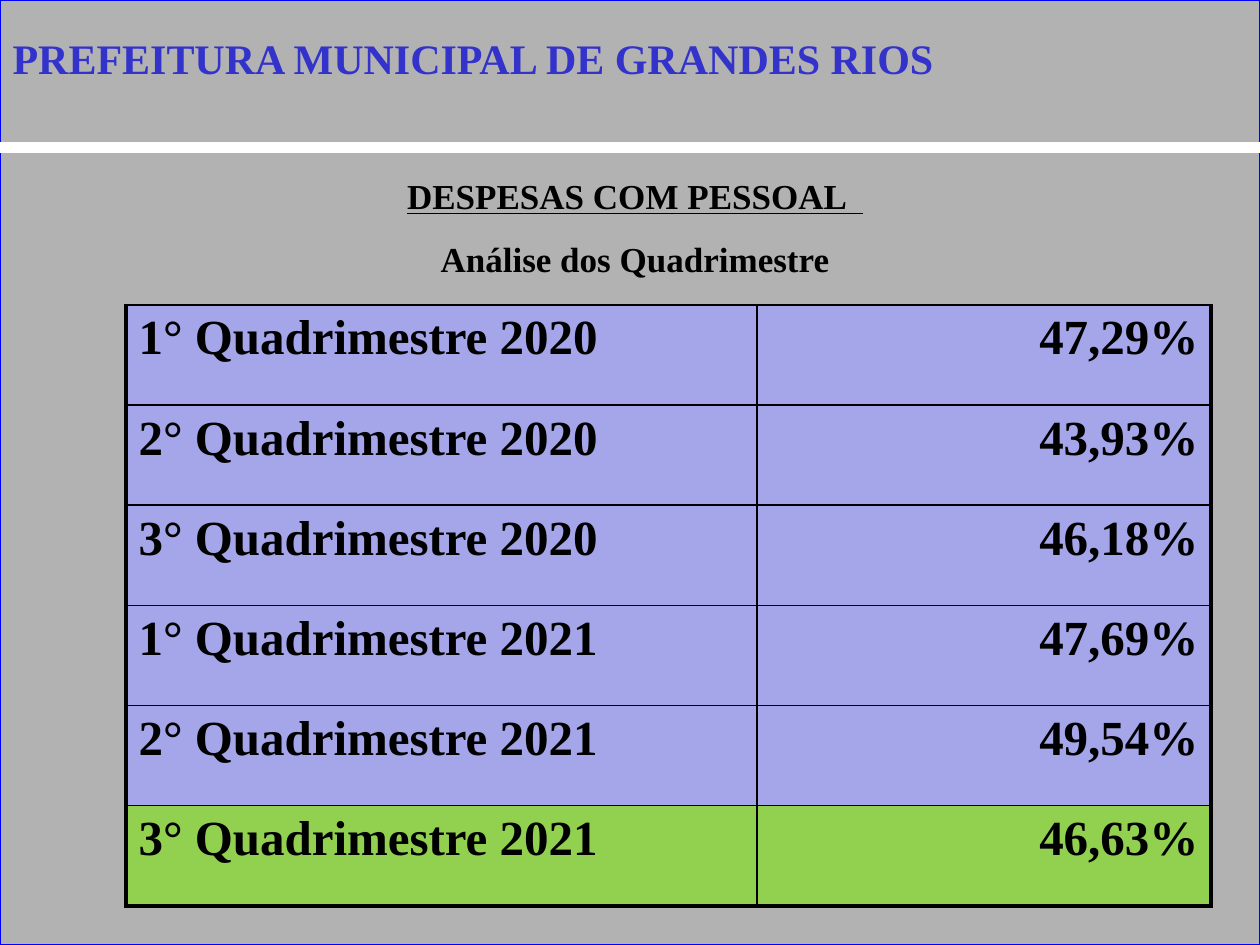
import pptx
import pptx.util
import pptx.dml.color
import pptx.enum.shapes
import pptx.enum.text
import pptx.oxml
import pptx.oxml.ns

Pt = pptx.util.Pt
Align = pptx.enum.text.PP_ALIGN
NS = pptx.oxml.ns.nsdecls("a")
HUES = {"back": "B2B2B2", "edge": "0000FF", "rule": "FFFFFF", "ink": "000000",
        "head": "3333CC", "shade": "808080", "row": "A5A5E9", "last": "92D050"}
FONT = "Times New Roman"


class Deck:
    """Style and current slide; lengths are units of a 10 by 7.5 grid."""

    def __init__(self, cols=10, rows=7.5):
        self.prs = pptx.Presentation()
        self.prs.slide_width = pptx.util.Inches(cols)
        self.prs.slide_height = pptx.util.Inches(rows)
        self.unit = self.prs.slide_width / cols
        self.slide = self.prs.slides.add_slide(self.prs.slide_layouts[5])
        self.shapes = self.slide.shapes

    def grid(self, *spans):
        return [round(span * self.unit) for span in spans]

    def hue(self, name):
        return pptx.dml.color.RGBColor.from_string(HUES[name])

    def paint(self, fill, name):
        fill.solid()
        fill.fore_color.rgb = self.hue(name)

    def stroke(self, line, name, width):
        line.color.rgb = self.hue(name)
        line.width = Pt(width)

    def add_run(self, para, text, size, hue="ink", under=False):
        run = para.add_run()
        run.text = text
        font = run.font
        font.name, font.size, font.bold = FONT, Pt(size), True
        font.underline = under
        self.paint(font.fill, hue)
        return run

    def frame(self, shape):
        body = shape.text_frame
        body.word_wrap = True
        body.auto_size = pptx.enum.text.MSO_AUTO_SIZE.SHAPE_TO_FIT_TEXT
        body.vertical_anchor = pptx.enum.text.MSO_ANCHOR.TOP
        return body

    def panel(self, box, fill, edge):
        kind = pptx.enum.shapes.MSO_SHAPE.RECTANGLE
        shape = self.shapes.add_shape(kind, *self.grid(*box))
        shape.shadow.inherit = False
        self.paint(shape.fill, fill)
        self.stroke(shape.line, edge, 0.75)

    def rule(self, ends, hue, width):
        kind = pptx.enum.shapes.MSO_CONNECTOR.STRAIGHT
        line = self.shapes.add_connector(kind, *self.grid(*ends))
        self.stroke(line.line, hue, width)
        line.element.spPr.append(pptx.oxml.parse_xml(f"<a:effectLst {NS}/>"))

    def title(self, box, text):
        shape = self.shapes.title
        shape.left, shape.top, shape.width, shape.height = self.grid(*box)
        para = self.frame(shape).paragraphs[0]
        para.alignment = Align.LEFT
        para.space_before = Pt(12)
        run = self.add_run(para, text, 24, "head")
        # Text shadow sits right after the run's fill
        shade = pptx.oxml.parse_xml(
            f'<a:effectLst {NS}><a:outerShdw dist="35921" dir="2700000">'
            f'<a:srgbClr val="{HUES["shade"]}"/></a:outerShdw></a:effectLst>')
        run._r.rPr.find(pptx.oxml.ns.qn("a:solidFill")).addnext(shade)
        # Bring the title in front of the panel
        shape.element.getparent().append(shape.element)

    def text(self, box, lines):
        body = self.frame(self.shapes.add_textbox(*self.grid(*box)))
        inset = self.grid(0.5)[0]
        for num, (words, under) in enumerate(lines):
            para = body.add_paragraph() if num else body.paragraphs[0]
            para.alignment = Align.CENTER
            para.line_spacing = 1.5
            props = para._p.get_or_add_pPr()
            props.set("marL", str(inset))
            props.set("indent", str(-inset))
            self.add_run(para, words, 20, under=under)

    def border(self, cell, sides):
        props = cell._tc.get_or_add_tcPr()
        for spot, (side, width) in enumerate(sides.items()):
            props.insert(spot, pptx.oxml.parse_xml(
                f'<a:ln{side} {NS} w="{Pt(width)}"><a:solidFill>'
                f'<a:srgbClr val="{HUES["ink"]}"/></a:solidFill></a:ln{side}>'))

    def table(self, box, widths, rows):
        last = len(rows) - 1
        table = self.shapes.add_table(len(rows), len(widths), *self.grid(*box)).table
        table.first_row = table.horz_banding = False
        for col, width in zip(table.columns, self.grid(*widths)):
            col.width = width
        for num, row in enumerate(rows):
            for pos, words in enumerate(row):
                cell = table.cell(num, pos)
                self.paint(cell.fill, "last" if num == last else "row")
                para = cell.text_frame.paragraphs[0]
                para.alignment = Align.RIGHT if pos else Align.LEFT
                para.space_before = Pt(5.6)
                self.add_run(para, words, 28)
                self.border(cell, {"L": 1 if pos else 2.25, "R": 2.25 if pos else 1,
                                   "T": 1, "B": 2.25 if num == last else 1})


def main():
    deck = Deck()

    # Backdrop and white rule
    deck.panel((0, 0, 10, 7.5), "back", "edge")
    deck.rule((0, 1.17, 10, 1.17), "rule", 6)

    # Headings
    deck.text((0.58, 1.17, 8.92, 5.11), [("DESPESAS COM PESSOAL  ", True),
                                         ("Análise dos Quadrimestre", False)])

    # Share of spending per four-month term
    rates = {2020: ("47,29%", "43,93%", "46,18%"),
             2021: ("47,69%", "49,54%", "46,63%")}
    rows = [(f"{term}° Quadrimestre {year}", rate)
            for year, terms in rates.items() for term, rate in enumerate(terms, 1)]
    deck.table((1, 2.42, 8.61, 4.77), (5.01, 3.6), rows)

    # Title
    deck.title((0, 0.21, 9.49, 0.5), "PREFEITURA MUNICIPAL DE GRANDES RIOS")

    deck.prs.save("out.pptx")


if __name__ == "__main__":
    main()
